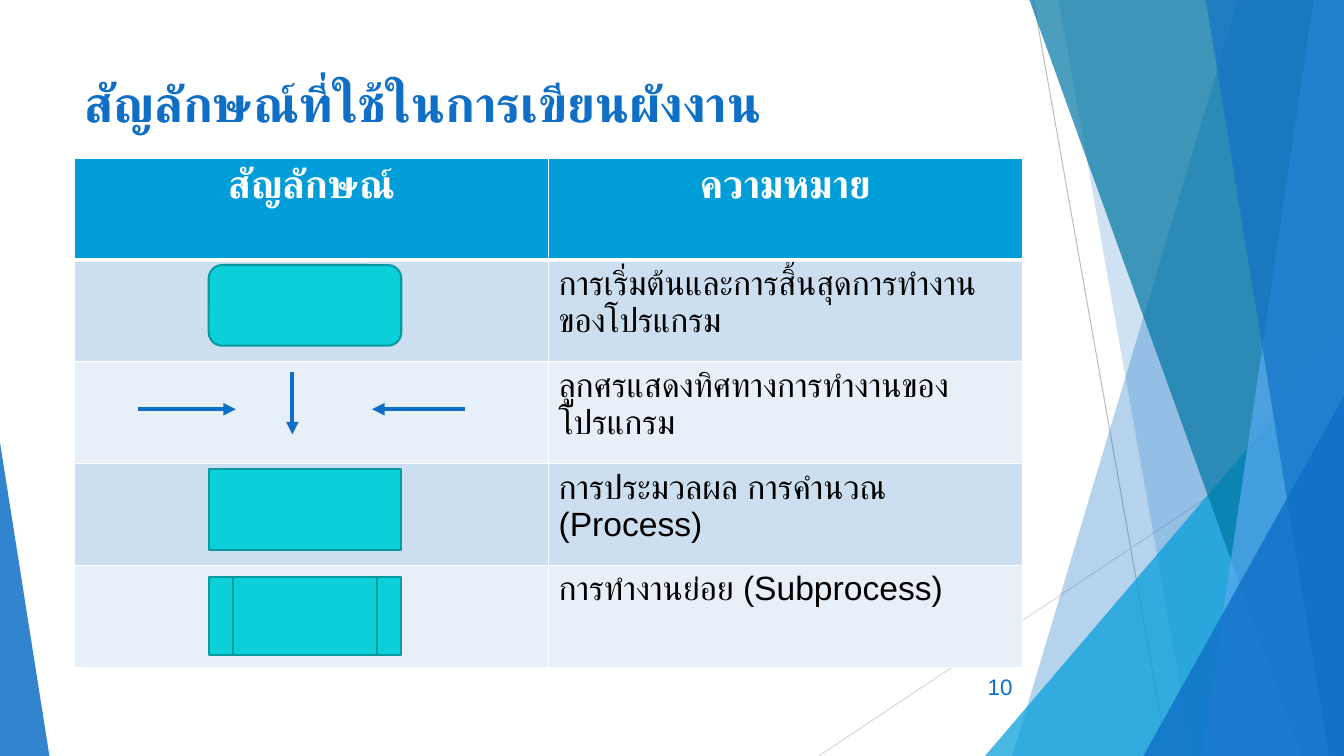
from dataclasses import dataclass

from lxml.etree import SubElement
from pptx import Presentation
from pptx.dml.color import RGBColor
from pptx.enum.shapes import MSO_CONNECTOR, MSO_SHAPE
from pptx.enum.text import MSO_ANCHOR, PP_ALIGN
from pptx.oxml.ns import qn
from pptx.util import Inches, Pt


@dataclass(frozen=True)
class Theme:
    font: str = "Arial"
    blue: str = "0F6FC6"
    cyan: str = "009DD9"
    teal: str = "0076A3"
    sky: str = "59AAF2"
    symbol: str = "0BD0D9"
    symbol_line: str = "089AA1"
    white: str = "FFFFFF"
    black: str = "000000"
    bands: tuple = ("CCDFF1", "E7EFF8")
    title: int = 36
    header: int = 28
    body: int = 24
    number: int = 16


T = Theme()
W, H = 13.33, 7.5

# Content
TITLE = "สัญลักษณ์ที่ใช้ในการเขียนผังงาน"
HEADERS = ("สัญลักษณ์", "ความหมาย")
MEANINGS = (
    "การเริ่มต้นและการสิ้นสุดการทำงานของโปรแกรม",
    "ลูกศรแสดงทิศทางการทำงานของโปรแกรม",
    "การประมวลผล การคำนวณ (Process)",
    "การทำงานย่อย (Subprocess)",
)
PAGE = "10"
LEFT, TABLE_TOP, TABLE_W, ROW_H = 0.74, 1.57, 9.4, 1.01

# Symbols: preset, top, height
SYMBOLS = (
    (MSO_SHAPE.ROUNDED_RECTANGLE, 2.63, 0.8),
    (MSO_SHAPE.RECTANGLE, 4.65, 0.81),
    (MSO_SHAPE.FLOWCHART_PREDEFINED_PROCESS, 5.72, 0.78),
)
SYMBOL_X, SYMBOL_W = 2.07, 1.91
ARROWS = ((1.37, 4.06, 2.34, 4.06), (2.9, 3.69, 2.9, 4.31), (4.61, 4.06, 3.69, 4.06))

# Backdrop: thin lines, then facets from back to front
RULES = ((10.25, 0, 11.58, H, "BFBFBF"), (W, 4.03, 8.12, H, "D9D9D9"))
# band: top x, bottom x (reaches the right edge); peak: left, top, width, apex
FACETS = (
    ("band", (12.28, 10.04), T.blue, 30),
    ("band", (10.5, 11.83), T.blue, 20),
    ("peak", (9.77, 3.33, 3.56, 1), T.cyan, 72),
    ("band", (10.21, 12.91), T.teal, 70),
    ("band", (13.03, 11.92), T.sky, 70),
    ("band", (11.96, 13.18), T.blue, 65),
    ("peak", (11.34, 3.93, 1.99, 1), T.blue, 80),
    ("peak", (0, 4.39, 0.49, 0), T.blue, 85),
)


def rgb(color):
    return RGBColor.from_string(color)


def paint(sp, color, alpha=100):
    sp.shadow.inherit = False
    sp.fill.solid()
    sp.fill.fore_color.rgb = rgb(color)
    sp.line.fill.background()
    if alpha < 100:
        clr = sp.fill._xPr.find(qn("a:solidFill"))[0]
        SubElement(clr, qn("a:alpha"), val=str(alpha * 1000))


def write(tf, text, size, color, bold=False, align=PP_ALIGN.LEFT):
    tf.text = text
    p = tf.paragraphs[0]
    p.alignment = align
    r = p.runs[0]
    r.font.size, r.font.bold, r.font.name = Pt(size), bold, T.font
    r.font.color.rgb = rgb(color)
    SubElement(r.font._element, qn("a:cs"), typeface=T.font)  # Thai script font


def line(shapes, ends, color, width, arrow=False):
    c = shapes.add_connector(MSO_CONNECTOR.STRAIGHT, *map(Inches, ends))
    c.line.color.rgb = rgb(color)
    c.line.width = Pt(width)
    if arrow:
        SubElement(c.line._get_or_add_ln(), qn("a:tailEnd"), type="triangle")
    SubElement(c._element.spPr, qn("a:effectLst"))


def facet(shapes, kind, geometry, color, alpha):
    if kind == "band":
        top_x, bottom_x = geometry
        fb = shapes.build_freeform(Inches(top_x), 0)
        corners = ((W, 0), (W, H), (bottom_x, H))
        fb.add_line_segments([(Inches(x), Inches(y)) for x, y in corners])
        sp = fb.convert_to_shape()
    else:
        x, y, w, apex = geometry
        sp = shapes.add_shape(MSO_SHAPE.ISOSCELES_TRIANGLE,
                              *map(Inches, (x, y, w, H - y)))
        sp.adjustments[0] = apex
    paint(sp, color, alpha)


def fill_cell(cell, color, bottom):
    tcPr = cell._tc.get_or_add_tcPr()
    for side, width in (("L", 1), ("R", 1), ("T", 1), ("B", bottom)):
        ln = SubElement(tcPr, qn(f"a:ln{side}"), w=str(Pt(width)))
        SubElement(SubElement(ln, qn("a:solidFill")), qn("a:srgbClr"), val=T.white)
    cell.fill.solid()
    cell.fill.fore_color.rgb = rgb(color)


def add_meanings(shapes):
    rows = [HEADERS] + [("", meaning) for meaning in MEANINGS]
    frame = shapes.add_table(len(rows), 2, *map(
        Inches, (LEFT, TABLE_TOP, TABLE_W, ROW_H * len(rows))))
    table = frame.table
    for i, row in enumerate(rows):
        head = i == 0
        table.rows[i].height = Inches(ROW_H)
        for j, text in enumerate(row):
            cell = table.cell(i, j)
            fill_cell(cell, T.cyan if head else T.bands[(i - 1) % 2], 3 if head else 1)
            if head:
                write(cell.text_frame, text, T.header, T.white, True, PP_ALIGN.CENTER)
            elif text:
                write(cell.text_frame, text, T.body, T.black)


def main():
    prs = Presentation()
    prs.slide_width, prs.slide_height = Inches(W), Inches(H)
    s = prs.slides.add_slide(prs.slide_layouts[5])
    shapes = s.shapes

    # Backdrop
    for *ends, color in RULES:
        line(shapes, ends, color, 0.75)
    for item in FACETS:
        facet(shapes, *item)

    # Title
    title = shapes.title
    title.left, title.top, title.width, title.height = map(
        Inches, (LEFT, 0.67, TABLE_W, 1.44))
    title.text_frame.vertical_anchor = MSO_ANCHOR.TOP
    write(title.text_frame, TITLE, T.title, T.blue, True)

    # Table and page number
    add_meanings(shapes)
    number = shapes.add_textbox(*map(Inches, (9.39, 6.61, 0.75, 0.4)))
    number.text_frame.word_wrap = True
    number.text_frame.vertical_anchor = MSO_ANCHOR.MIDDLE
    write(number.text_frame, PAGE, T.number, T.blue, align=PP_ALIGN.RIGHT)

    # Flowchart symbols
    for preset, top, height in SYMBOLS:
        sp = shapes.add_shape(preset, *map(Inches, (SYMBOL_X, top, SYMBOL_W, height)))
        paint(sp, T.symbol)
        sp.line.color.rgb = rgb(T.symbol_line)
        sp.line.width = Pt(1.5)
    for ends in ARROWS:
        line(shapes, ends, T.blue, 3, arrow=True)

    prs.save("out.pptx")


if __name__ == "__main__":
    main()
